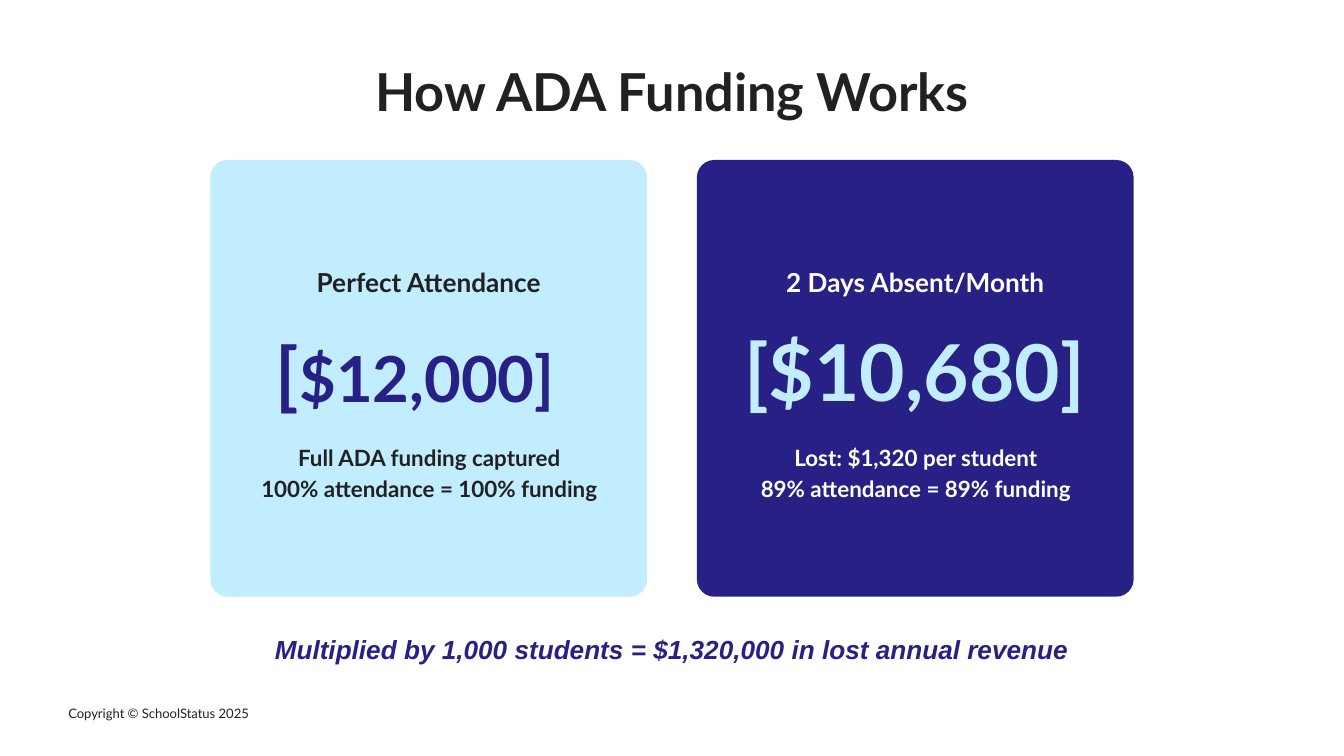
from dataclasses import dataclass

import pptx
import pptx.dml.color
import pptx.enum.shapes
import pptx.enum.text
import pptx.util

PX = 4572  # EMU per px, 200 px to the inch


@dataclass(frozen=True)
class Theme:
    ink: str = "212121"
    navy: str = "282185"
    sky: str = "C1EDFF"
    white: str = "FFFFFF"
    font: str = "Lato"
    accent_font: str = "Arial"
    title: int = 28
    label: int = 14
    detail: int = 12
    credit: int = 7
    amount: int = 34
    bracket: int = 40
    reduced_amount: int = 42


THEME = Theme()


@dataclass(frozen=True)
class Area:
    left: int
    top: int
    width: int
    height: int

    def emu(self) -> list[int]:
        return [n * PX for n in (self.left, self.top, self.width, self.height)]


@dataclass(frozen=True)
class Span:
    text: str
    size: int
    color: str
    font: str = THEME.font
    bold: bool = True
    italic: bool = False


@dataclass(frozen=True)
class Card:
    left: int
    fill: str
    text_color: str
    amount_area: Area
    label: str
    amount: list[Span]
    details: list[str]


def rgb(value: str) -> pptx.dml.color.RGBColor:
    return pptx.dml.color.RGBColor.from_string(value)


def write(box, lines: list[list[Span]], centered: bool = True,
          spacing: float = 1.0) -> None:
    frame = box.text_frame
    frame.word_wrap = True
    frame.auto_size = pptx.enum.text.MSO_AUTO_SIZE.NONE
    frame.vertical_anchor = pptx.enum.text.MSO_ANCHOR.TOP
    frame.margin_left = frame.margin_right = 20 * PX
    frame.margin_top = frame.margin_bottom = 20 * PX
    align = pptx.enum.text.PP_ALIGN
    for index, spans in enumerate(lines):
        para = frame.add_paragraph() if index else frame.paragraphs[0]
        para.alignment = align.CENTER if centered else align.LEFT
        para.line_spacing = spacing
        for span in spans:
            run = para.add_run()
            run.text = span.text
            run.font.size = pptx.util.Pt(span.size)
            run.font.name = span.font
            run.font.bold = span.bold
            run.font.italic = span.italic
            run.font.color.rgb = rgb(span.color)


def add_text(page, area: Area, lines: list[list[Span]],
             centered: bool = True, spacing: float = 1.0) -> None:
    write(page.shapes.add_textbox(*area.emu()), lines, centered, spacing)


def draw_panel(page, card: Card) -> None:
    panel = page.shapes.add_shape(
        pptx.enum.shapes.MSO_SHAPE.ROUNDED_RECTANGLE,
        *Area(card.left, 238, 650, 650).emu())
    panel.adjustments[0] = 0.04
    panel.shadow.inherit = False
    panel.fill.solid()
    panel.fill.fore_color.rgb = rgb(card.fill)
    panel.line.fill.background()


def draw_card(page, card: Card) -> None:
    draw_panel(page, card)
    label = Span(card.label, THEME.label, card.text_color)
    details = [[Span(text, THEME.detail, card.text_color)]
               for text in card.details]
    add_text(page, Area(card.left + 26, 370, 598, 88), [[label]], spacing=1.15)
    add_text(page, card.amount_area, [card.amount], spacing=1.15)
    add_text(page, Area(card.left - 2, 635, 656, 174), details, spacing=1.15)


CARDS = [
    Card(313, THEME.sky, THEME.ink, Area(371, 448, 494, 176),
         "Perfect Attendance",
         [Span("[", THEME.bracket, THEME.navy),
          Span("$12,000]", THEME.amount, THEME.navy)],
         ["Full ADA funding captured", "100% attendance = 100% funding"]),
    Card(1037, THEME.navy, THEME.white, Area(1066, 440, 590, 182),
         "2 Days Absent/Month",
         [Span("[$10,680]", THEME.reduced_amount, THEME.sky)],
         ["Lost: $1,320 per student", "89% attendance = 89% funding"]),
]


def main() -> None:
    deck = pptx.Presentation()
    deck.slide_width, deck.slide_height = 2000 * PX, 1125 * PX
    page = deck.slides.add_slide(deck.slide_layouts.get_by_name("Title Only"))

    # Title
    title = page.shapes.title
    title.left, title.top, title.width, title.height = Area(68, 68, 1864, 126).emu()
    write(title, [[Span("How ADA Funding Works", THEME.title, THEME.ink)]])

    # Funding comparison
    for card in CARDS:
        draw_card(page, card)

    # Takeaway and copyright line
    add_text(page, Area(318, 923, 1364, 88), [[Span(
        "Multiplied by 1,000 students = $1,320,000 in lost annual revenue",
        THEME.label, THEME.navy, THEME.accent_font, italic=True)]])
    add_text(page, Area(82, 1030, 646, 68), [[Span(
        "Copyright © SchoolStatus 2025", THEME.credit, THEME.ink, bold=False)]],
        centered=False)

    deck.save("out.pptx")


if __name__ == "__main__":
    main()
